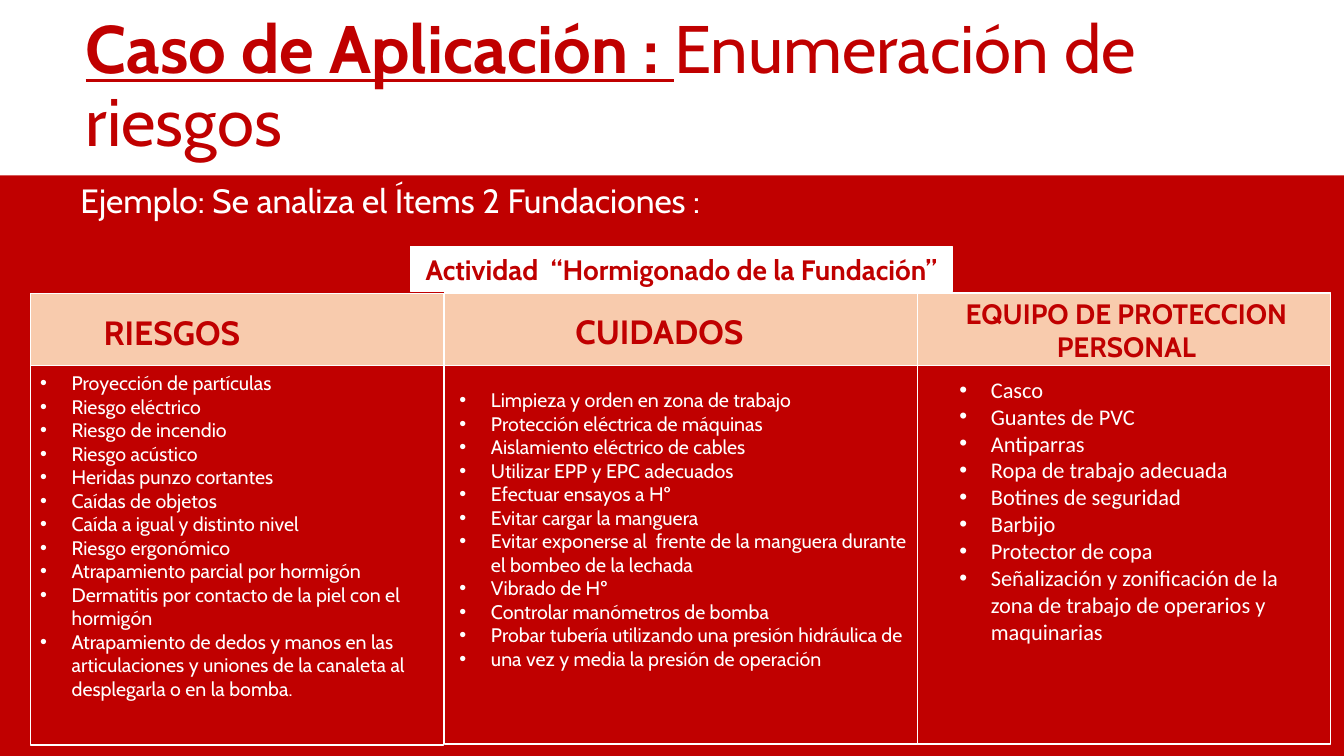
"""Builds the slide listing risks, precautions and protective equipment for pouring a foundation."""
from lxml.etree import SubElement
from pptx import Presentation
from pptx.dml.color import RGBColor
from pptx.enum.shapes import MSO_SHAPE
from pptx.enum.text import MSO_ANCHOR, MSO_AUTO_SIZE, PP_ALIGN
from pptx.oxml.ns import qn
from pptx.util import Pt

RED = RGBColor(0xC0, 0x00, 0x00)
WHITE = RGBColor(0xFF, 0xFF, 0xFF)
PEACH = RGBColor(0xF8, 0xCB, 0xAD)
INDENT = Pt(22.5)

COLUMNS = [
    {
        "frame": (21.6, 209.5, 295.2, 322.6),
        "heading": "RIESGOS",
        "heading_box": (67, 219.6, 112.3, 36),
        "heading_size": 24,
        "heading_align": PP_ALIGN.LEFT,
        "list_box": (21.6, 261.4, 290.2, 244.8),
        "list_font": ("Cabin", 14),
        "items": [
            "Proyección de partículas",
            "Riesgo eléctrico",
            "Riesgo de incendio",
            "Riesgo acústico",
            "Heridas punzo cortantes",
            "Caídas de objetos",
            "Caída a igual y distinto nivel",
            "Riesgo ergonómico",
            "Atrapamiento parcial por hormigón",
            "Dermatitis por contacto de la piel con el hormigón",
            "Atrapamiento de dedos y manos en las articulaciones y uniones "
            "de la canaleta al desplegarla o en la bomba.",
        ],
    },
    {
        "frame": (317.5, 208.8, 337.7, 322.6),
        "heading": "CUIDADOS",
        "heading_box": (403.9, 218.9, 178.6, 60.5),
        "heading_size": 24,
        "heading_align": PP_ALIGN.LEFT,
        "list_box": (321.1, 273.6, 339.8, 232.6),
        "list_font": ("Cabin", 14),
        "items": [
            "Limpieza y orden en zona de trabajo",
            "Protección eléctrica de máquinas",
            "Aislamiento eléctrico de cables",
            "Utilizar EPP y EPC adecuados",
            "Efectuar ensayos a Hº",
            "Evitar cargar la manguera",
            "Evitar exponerse al  frente de la manguera durante el bombeo de la lechada",
            "Vibrado de Hº",
            "Controlar manómetros de bomba",
            "Probar tubería utilizando una presión hidráulica de",
            "una vez y media la presión de operación",
        ],
    },
    {
        "frame": (655.2, 208.8, 295.2, 322.6),
        "heading": "EQUIPO DE PROTECCION PERSONAL",
        "heading_box": (672.5, 208.1, 264.2, 55.4),
        "heading_size": 20,
        "heading_align": PP_ALIGN.CENTER,
        "list_box": (678.2, 265, 257.8, 200.9),
        "list_font": ("Calibri", 16),
        "items": [
            "Casco",
            "Guantes de PVC",
            "Antiparras",
            "Ropa de trabajo adecuada",
            "Botines de seguridad",
            "Barbijo",
            "Protector de copa",
            "Señalización y zonificación de la zona de trabajo de operarios y maquinarias",
        ],
    },
]


def add_rectangle(box, fill=None, line_width=None):
    shape = slide.shapes.add_shape(MSO_SHAPE.RECTANGLE, *map(Pt, box))
    shape.shadow.inherit = False
    if fill is None:
        shape.fill.background()
    else:
        shape.fill.solid()
        shape.fill.fore_color.rgb = fill
    if line_width is None:
        shape.line.fill.background()
    else:
        shape.line.color.rgb = WHITE
        shape.line.width = Pt(line_width)
    return shape


def write_text(shape, text, size, color, bold=False, font="Cabin", align=PP_ALIGN.LEFT):
    frame = shape.text_frame
    frame.text = text
    frame.word_wrap = True
    frame.auto_size = MSO_AUTO_SIZE.SHAPE_TO_FIT_TEXT
    for paragraph in frame.paragraphs:
        paragraph.alignment = align
        for run in paragraph.runs:
            run.font.name = font
            run.font.size = Pt(size)
            run.font.bold = bold
            run.font.color.rgb = color


presentation = Presentation()
presentation.slide_width = Pt(960)
presentation.slide_height = Pt(540)
slide = presentation.slides.add_slide(presentation.slide_layouts[5])
slide.background.fill.solid()
slide.background.fill.fore_color.rgb = RED

heading_strip = add_rectangle((21.6, 209.5, 928.8, 51.8), PEACH, 1)
title_band = add_rectangle((0, 0, 960, 125.3), WHITE)

title = slide.shapes.title
title_band.element.addnext(title.element)
title.left, title.top, title.width, title.height = Pt(54), Pt(10.8), Pt(860.4), Pt(104.4)
title.text_frame.word_wrap = True
title.text_frame.auto_size = MSO_AUTO_SIZE.NONE
title.text_frame.vertical_anchor = MSO_ANCHOR.MIDDLE
title_paragraph = title.text_frame.paragraphs[0]
title_paragraph.alignment = PP_ALIGN.LEFT
title_paragraph.line_spacing = 0.9
for text, emphasized in [("Caso de Aplicación : ", True), ("Enumeración de riesgos", False)]:
    run = title_paragraph.add_run()
    run.text = text
    run.font.name = "Cabin"
    run.font.size = Pt(48)
    run.font.color.rgb = RED
    run.font.bold = emphasized
    run.font.underline = emphasized

example = slide.shapes.add_textbox(Pt(50.4), Pt(125.3), Pt(827.3), Pt(36))
write_text(example, "Ejemplo: Se analiza el Ítems 2 Fundaciones :", 24, WHITE)

activity = add_rectangle((293, 176.4, 387.4, 31.7), WHITE, 0.75)
write_text(activity, "Actividad  “Hormigonado de la Fundación”", 20, RED, True, align=PP_ALIGN.CENTER)

for column in COLUMNS:
    heading = slide.shapes.add_textbox(*map(Pt, column["heading_box"]))
    write_text(heading, column["heading"], column["heading_size"], RED, True,
               align=column["heading_align"])

    bullet_list = slide.shapes.add_textbox(*map(Pt, column["list_box"]))
    font, size = column["list_font"]
    write_text(bullet_list, "\n".join(column["items"]), size, WHITE, font=font)
    for paragraph in bullet_list.text_frame.paragraphs:
        properties = paragraph._p.get_or_add_pPr()
        properties.set("marL", str(INDENT))
        properties.set("indent", str(-INDENT))
        SubElement(properties, qn("a:buFont"), typeface="Arial")
        SubElement(properties, qn("a:buChar"), char="•")

    add_rectangle(column["frame"], line_width=1)

presentation.save("out.pptx")
